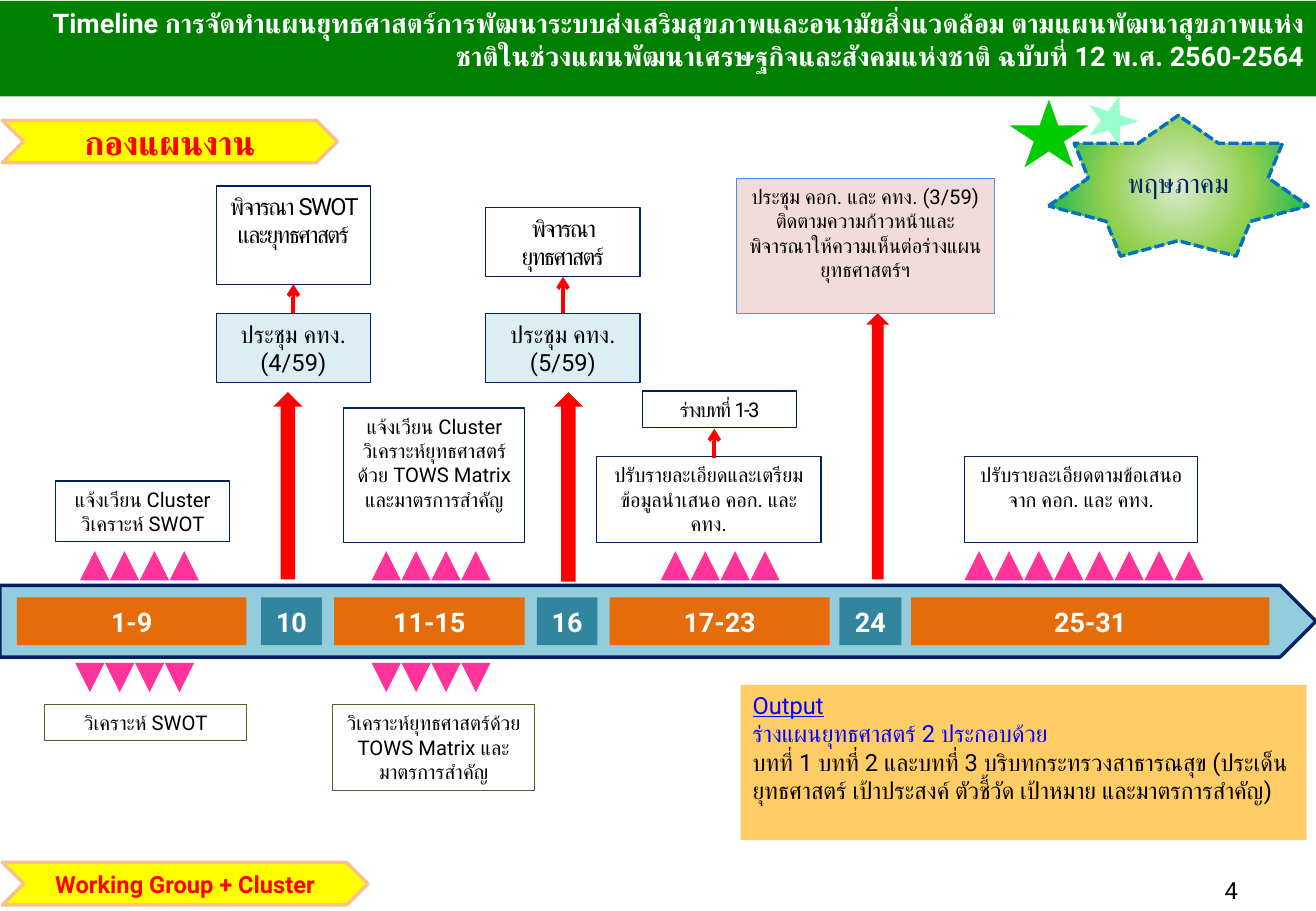
from pptx import Presentation
from pptx import util as u
from pptx.dml.color import RGBColor
from pptx.enum import dml, shapes, text
from pptx.oxml import parse_xml
from pptx.oxml.ns import nsdecls, qn

COLORS = {
    "green": "008000", "white": "FFFFFF", "black": "000000", "navy": "002060",
    "olive": "4F6228", "ice": "DBEEF4", "sky": "93CDDD", "teal": "31859C",
    "orange": "E46C0A", "red": "FF0000", "yellow": "FFFF00", "peach": "FAC090",
    "star": "00CC00", "mint": "99FFCC", "amber": "FFCC66", "blue": "0000FF",
    "rose": "F2DCDB", "steel": "558ED5", "pink": "FF3399", "azure": "0070C0",
    "pale": "DDEBCF", "lime": "92D050", "leaf": "00B050",
}
KIND = shapes.MSO_SHAPE
ALIGN = text.PP_ALIGN
ANCHOR = text.MSO_ANCHOR


class TimelineSlide:
    font = "Roboto"

    def __init__(self, deck):
        self.slide = deck.slides.add_slide(deck.slide_layouts[5])

    def color(self, name):
        return RGBColor.from_string(COLORS[name])

    def letter(self, frame, words, size, color="black", bold=False,
               align=ALIGN.CENTER, anchor=ANCHOR.TOP, spacing=0):
        frame.text = words
        frame.word_wrap = True
        frame.auto_size = text.MSO_AUTO_SIZE.NONE
        frame.vertical_anchor = anchor
        for paragraph in frame.paragraphs:
            paragraph.alignment = align
            for run in paragraph.runs:
                run.font.name = self.font
                run.font.size = u.Pt(size)
                run.font.bold = bold
                run.font.color.rgb = self.color(color)
                props = run._r.get_or_add_rPr()
                props.append(parse_xml(f'<a:cs {nsdecls("a")} typeface="{self.font}"/>'))
                if spacing:
                    props.set("spc", str(spacing * 100))

    def title(self, words, left, top, width, height):
        heading = self.slide.shapes.title
        heading.left, heading.top = u.Pt(left), u.Pt(top)
        heading.width, heading.height = u.Pt(width), u.Pt(height)
        heading.fill.solid()
        heading.fill.fore_color.rgb = self.color("green")
        self.letter(heading.text_frame, words, 16, "white", True, ALIGN.RIGHT)
        heading.text_frame.paragraphs[0]._p.get_or_add_pPr().set("marL", str(u.Pt(7.2)))

    def shape(self, kind, left, top, width, height, fill=None, line=None, weight=0.75, group=None):
        owner = group or self.slide
        item = owner.shapes.add_shape(kind, u.Pt(left), u.Pt(top), u.Pt(width), u.Pt(height))
        item.shadow.inherit = False
        if fill:
            item.fill.solid()
            item.fill.fore_color.rgb = self.color(fill)
        else:
            item.fill.background()
        if line:
            item.line.color.rgb = self.color(line)
            item.line.width = u.Pt(weight)
        else:
            item.line.fill.background()
        return item

    def box(self, words, left, top, width, height, size=12, fill=None, line="navy", spacing=0):
        item = self.shape(KIND.RECTANGLE, left, top, width, height, fill, line)
        self.letter(item.text_frame, words, size, spacing=spacing)
        return item

    def banner(self, words, top, width, size):
        item = self.shape(KIND.CHEVRON, 1.4, top, width, 25.2, "yellow", "peach", 2)
        self.letter(item.text_frame, words, size, "red", True, anchor=ANCHOR.MIDDLE)

    def timeline(self, periods):
        month = self.slide.shapes.add_group_shape()
        self.shape(KIND.PENTAGON, 0, 347, 780, 42.5, "sky", "navy", 2, month)
        for days, left, width in periods:
            fill = "orange" if "-" in days else "teal"
            period = self.shape(KIND.RECTANGLE, left, 354.2, width, 28.3, fill, group=month)
            self.letter(period.text_frame, days, 16, "white", True, anchor=ANCHOR.MIDDLE)

    def triangles(self, left, top, rotation):
        row = self.slide.shapes.add_group_shape()
        for step in range(4):
            mark = self.shape(KIND.ISOSCELES_TRIANGLE, left + step * 17.7, top, 17.3, 17.3, "pink", group=row)
            mark.rotation = rotation

    def arrow(self, x, start, end, source=None, target=None):
        link = self.slide.shapes.add_connector(
            shapes.MSO_CONNECTOR.STRAIGHT, u.Pt(x), u.Pt(start), u.Pt(x), u.Pt(end))
        if source:
            link.begin_connect(source, 0)
        if target:
            link.end_connect(target, 2)
        link.line.color.rgb = self.color("red")
        link.line.width = u.Pt(2.25)
        props = link._element.spPr
        props.find(qn("a:ln")).append(parse_xml(f'<a:tailEnd {nsdecls("a")} type="arrow"/>'))
        props.append(parse_xml(f'<a:effectLst {nsdecls("a")}/>'))

    def month(self, words, left, top, width, height):
        burst = self.shape(KIND.STAR_7_POINT, left, top, width, height, "lime", "azure", 2)
        burst.line.dash_style = dml.MSO_LINE.SQUARE_DOT
        stops = "".join(
            f'<a:gs pos="{place * 1000}"><a:srgbClr val="{COLORS[name]}"/></a:gs>'
            for place, name in ((0, "pale"), (50, "lime"), (100, "leaf")))
        glow = parse_xml(
            f'<a:gradFill {nsdecls("a")} rotWithShape="1"><a:gsLst>{stops}</a:gsLst>'
            '<a:path path="circle"><a:fillToRect l="50000" t="50000" r="50000" b="50000"/>'
            '</a:path></a:gradFill>')
        props = burst._element.spPr
        props.replace(props.find(qn("a:solidFill")), glow)
        self.letter(burst.text_frame, words, 16, "navy", anchor=ANCHOR.MIDDLE)

    def output(self, lines, left, top, width, height):
        panel = self.shape(KIND.RECTANGLE, left, top, width, height, "amber")
        self.letter(panel.text_frame, "\n".join(lines), 14, align=ALIGN.LEFT)
        heading, summary, _ = panel.text_frame.paragraphs
        for paragraph in (heading, summary):
            paragraph.runs[0].font.color.rgb = self.color("blue")
        heading.runs[0].font.underline = True

    def page_number(self, number, left, top, width, height):
        page = self.slide.shapes.add_textbox(u.Pt(left), u.Pt(top), u.Pt(width), u.Pt(height))
        self.letter(page.text_frame, number, 14, align=ALIGN.RIGHT, anchor=ANCHOR.MIDDLE)


def main():
    deck = Presentation()
    deck.slide_width, deck.slide_height = u.Pt(780), u.Pt(540)
    plan = TimelineSlide(deck)
    plan.title("Timeline การจัดทำแผนยุทธศาสตร์การพัฒนาระบบส่งเสริมสุขภาพและอนามัยสิ่งแวดล้อม "
               "ตามแผนพัฒนาสุขภาพแห่งชาติในช่วงแผนพัฒนาเศรษฐกิจและสังคมแห่งชาติ ฉบับที่ 12 พ.ศ. 2560-2564",
               0, 0.5, 780, 56.7)

    plan.timeline([("1-9", 10.1, 136), ("10", 154.8, 36), ("11-15", 198, 113),
                   ("16", 318.2, 36), ("17-23", 361.4, 130.3), ("24", 497.5, 36.7),
                   ("25-31", 540, 212.4)])
    for left, top, width, bottom in ((162, 232.4, 17.3, 343.4), (328.3, 232.4, 17.3, 344.8),
                                     (513.4, 185.6, 13.7, 343.4)):
        plan.shape(KIND.UP_ARROW, left, top, width, bottom - top, "red")

    plan.month("พฤษภาคม", 621.4, 68.4, 154, 83.5)
    plan.banner("กองแผนงาน", 71.3, 198.7, 20)
    plan.shape(KIND.STAR_5_POINT, 598.3, 59, 46.8, 40.3, "star")
    plan.shape(KIND.STAR_5_POINT, 643.7, 56.2, 31, 28, "mint").rotation = 18.5

    meetings = [("(4/59)", 128.2, "พิจารณา SWOT และยุทธศาสตร์", 110.2, 58.3),
                ("(5/59)", 288, "พิจารณา ยุทธศาสตร์", 123.1, 41)]
    for session, left, topic, top, height in meetings:
        meeting = plan.box(f"ประชุม คทง. {session}", left, 185.8, 91.4, 41, 14, "ice")
        review = plan.box(topic, left, top, 91.4, height, 14, spacing=-1)
        plan.arrow(left + 45.7, 185.8, top + height, meeting, review)

    plan.box("แจ้งเวียน Cluster วิเคราะห์ SWOT", 33.1, 285.1, 103, 36)
    plan.box("แจ้งเวียน Cluster วิเคราะห์ยุทธศาสตร์ด้วย TOWS Matrix และมาตรการสำคัญ", 203.8, 241.9, 107.3, 79.9)
    plan.box("ปรับรายละเอียดและเตรียมข้อมูลนำเสนอ คอก. และ คทง.", 353.5, 270.7, 133.2, 51.1)
    plan.box("ร่างบทที่ 1-3", 380.9, 231.8, 91.4, 21.6, spacing=-1)
    plan.arrow(423.4, 271.4, 254.2)
    plan.box("ประชุม คอก. และ คทง. (3/59) ติดตามความก้าวหน้าและพิจารณาให้ความเห็นต่อร่างแผนยุทธศาสตร์ฯ",
             436.5, 105.8, 152.8, 79.9, fill="rose", line="steel")
    plan.box("ปรับรายละเอียดตามข้อเสนอจาก คอก. และ คทง.", 571.7, 270.7, 138.2, 51.1)
    plan.box("วิเคราะห์ SWOT", 26.6, 417.6, 119.5, 21.6, line="olive")
    plan.box("วิเคราะห์ยุทธศาสตร์ด้วย TOWS Matrix และมาตรการสำคัญ", 197.3, 417.6, 119.5, 51.1, line="olive")

    plan.output(["Output", "ร่างแผนยุทธศาสตร์ 2 ประกอบด้วย",
                 "บทที่ 1 บทที่ 2 และบทที่ 3 บริบทกระทรวงสาธารณสุข (ประเด็นยุทธศาสตร์ "
                 "เป้าประสงค์ ตัวชี้วัด เป้าหมาย และมาตรการสำคัญ)"], 439, 406, 335.5, 92)
    plan.page_number("4", 558.7, 513.4, 182.2, 28.8)
    plan.banner("Working Group + Cluster", 511.2, 216.7, 14)

    for left in (47.5, 220.3, 391.7, 571.7, 643):
        plan.triangles(left, 326.7, 0)
    for left in (44.6, 220.3):
        plan.triangles(left, 393, 180)
    deck.save("out.pptx")


if __name__ == "__main__":
    main()
